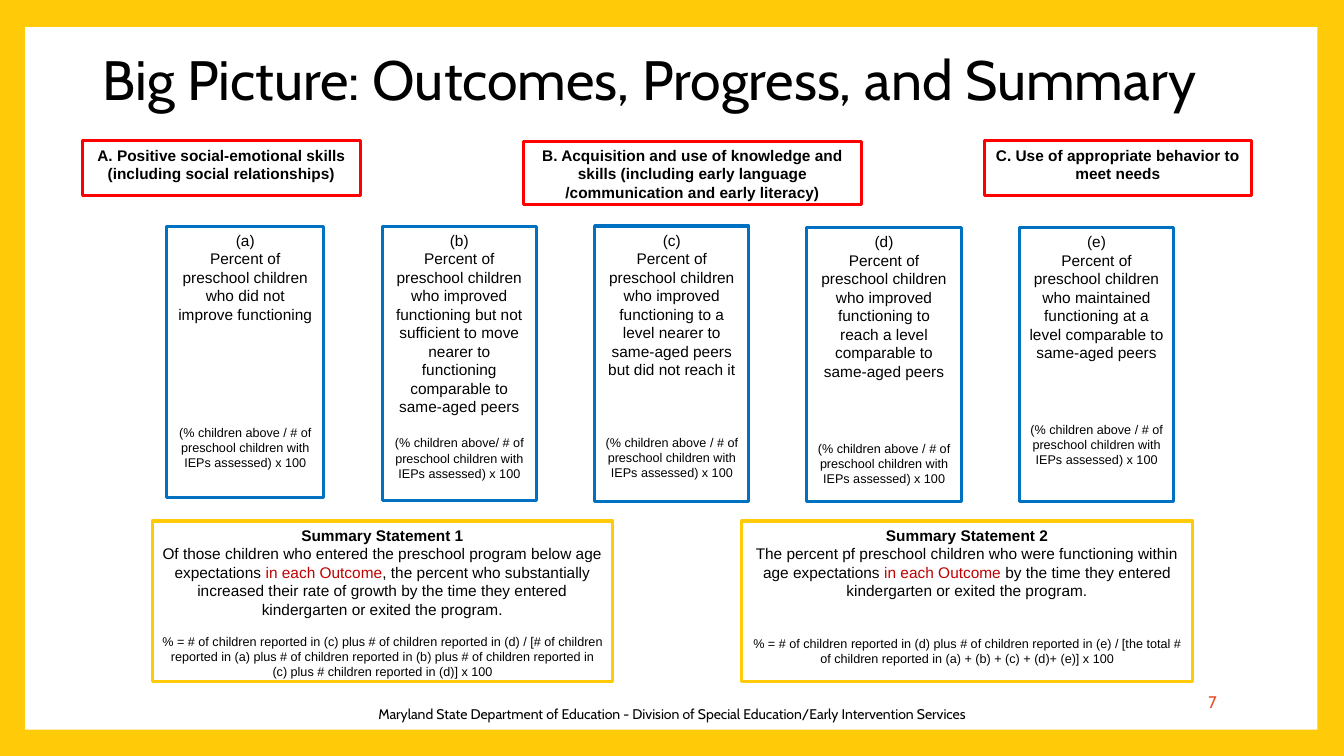
from pptx import Presentation
from pptx.dml.color import RGBColor
from pptx.enum import shapes, text
from pptx.util import Pt

BLACK, WHITE, GOLD = "000000", "FFFFFF", "FFCA08"
RED, BLUE, CRIMSON, ORANGE = "FF0000", "0070C0", "C00000", "E64823"
CENTER, RIGHT = text.PP_ALIGN.CENTER, text.PP_ALIGN.RIGHT
MIDDLE, TOP = text.MSO_ANCHOR.MIDDLE, text.MSO_ANCHOR.TOP

OUTCOMES = [
    ((59, 100.5, 198.4, 39), "A. Positive social-emotional skills (including social relationships)"),
    ((374, 100.8, 241.4, 45.4), "B. Acquisition and use of knowledge and skills "
     "(including early language /communication and early literacy)"),
    ((703, 100.5, 191, 39), "C. Use of appropriate behavior to meet needs"),
]
FORMULA = "(% children above / # of preschool children with IEPs assessed) x 100"
PROGRESS = [
    ((119.2, 161.5, 112, 193.7), "a", "did not improve functioning", 72.2, FORMULA),
    ((273, 161.5, 110.2, 195.8), "b", "improved functioning but not sufficient to move nearer to "
     "functioning comparable to same-aged peers", 13.8, FORMULA.replace("above /", "above/")),
    ((424.8, 161.5, 110.2, 196.6), "c", "improved functioning to a level nearer to same-aged peers "
     "but did not reach it", 39.7, FORMULA),
    ((576.4, 162.4, 110.2, 195.8), "d", "improved functioning to reach a level comparable to "
     "same-aged peers", 43, FORMULA),
    ((728.2, 162.4, 110.2, 195.8), "e", "maintained functioning at a level comparable to "
     "same-aged peers", 43, FORMULA),
]
SUMMARIES = [
    ((108.7, 372.2, 329, 114.5), "Summary Statement 1",
     "Of those children who entered the preschool program below age expectations ",
     "in each Outcome",
     ", the percent who substantially increased their rate of growth by the time they entered "
     "kindergarten or exited the program.", 10.8,
     "% = # of children reported in (c) plus # of children reported in (d) / [# of children "
     "reported in (a) plus # of children reported in (b) plus # of children reported in (c) "
     "plus # children reported in (d)] x 100"),
    ((529.9, 372.2, 321.8, 114.5), "Summary Statement 2",
     "The percent pf preschool children who were functioning within age expectations ",
     "in each Outcome ",
     "by the time they entered kindergarten or exited the program.", 25.8,
     "% = # of children reported in (d) plus # of children reported in (e) / [the total # of "
     "children reported in (a) + (b) + (c) + (d)+ (e)] x 100"),
]


def rgb(color):
    return RGBColor.from_string(color)


def lengths(box):
    return [Pt(value) for value in box]


def apply(target, formats):
    for name, value in formats.items():
        setattr(target, name, value)


def add_words(paragraph, words, color=BLACK, **formats):
    run = paragraph.add_run()
    run.text = words
    apply(run.font, formats)
    run.font.color.rgb = rgb(color)


def fill_frame(frame, paragraphs, anchor=TOP):
    apply(frame, {"word_wrap": True, "vertical_anchor": anchor})
    for index, (layout, runs) in enumerate(paragraphs):
        paragraph = frame.add_paragraph() if index else frame.paragraphs[0]
        apply(paragraph, layout)
        for words, formats in runs:
            add_words(paragraph, words, **formats)


def arial(words, size=11, color=BLACK, bold=False):
    return words, {"size": Pt(size), "name": "Arial", "color": color, "bold": bold}


def centered(*runs, gap=0):
    return {"alignment": CENTER, "space_before": Pt(gap)}, runs


def add_panel(slide, box, outline=None, paragraphs=()):
    panel = slide.shapes.add_shape(shapes.MSO_SHAPE.RECTANGLE, *lengths(box))
    panel.shadow.inherit = False
    panel.fill.solid()
    panel.fill.fore_color.rgb = rgb(WHITE)
    if outline:
        panel.line.color.rgb = rgb(outline)
        panel.line.width = Pt(2.25)
    else:
        panel.line.fill.background()
    fill_frame(panel.text_frame, paragraphs)


def add_outcome(slide, box, skill):
    add_panel(slide, box, RED, [centered(arial(skill, bold=True))])


def add_progress(slide, box, letter, result, gap, formula):
    add_panel(slide, box, BLUE, [
        centered(arial(f"({letter})")),
        centered(arial(f"Percent of preschool children who {result}")),
        centered(arial(formula, 9), gap=gap),
    ])


def add_summary(slide, box, heading, opening, emphasis, ending, gap, formula):
    add_panel(slide, box, GOLD, [
        centered(arial(heading, bold=True)),
        centered(arial(opening), arial(emphasis, color=CRIMSON), arial(ending)),
        centered(arial(formula, 9), gap=gap),
    ])


def add_title(slide, box, words):
    title = slide.shapes.title
    title.element.getparent().append(title.element)
    apply(title, dict(zip(("left", "top", "width", "height"), lengths(box))))
    layout = {"alignment": text.PP_ALIGN.LEFT, "line_spacing": 0.9}
    runs = [(words, {"size": Pt(39.6), "name": "Cabin"})]
    fill_frame(title.text_frame, [(layout, runs)], MIDDLE)


def add_note(slide, box, words, size, color, alignment, anchor):
    note = slide.shapes.add_textbox(*lengths(box))
    runs = [(words, {"size": Pt(size), "name": "Cabin", "color": color})]
    fill_frame(note.text_frame, [({"alignment": alignment}, runs)], anchor)


def main():
    deck = Presentation()
    apply(deck, {"slide_width": Pt(960), "slide_height": Pt(540)})
    slide = deck.slides.add_slide(deck.slide_layouts[5])
    slide.background.fill.solid()
    slide.background.fill.fore_color.rgb = rgb(GOLD)

    add_panel(slide, (18, 19.4, 923, 501.8))
    add_title(slide, (66.2, 20.6, 859, 77), "Big Picture: Outcomes, Progress, and Summary")
    add_note(slide, (741.6, 486.7, 134.6, 28.8), "7", 12, ORANGE, RIGHT, MIDDLE)
    for add_region, entries in ((add_outcome, OUTCOMES), (add_progress, PROGRESS),
                                (add_summary, SUMMARIES)):
        for entry in entries:
            add_region(slide, *entry)
    add_note(slide, (261.4, 500.4, 437, 19.4),
             "Maryland State Department of Education - Division of Special Education/"
             "Early Intervention Services", 10, BLACK, CENTER, TOP)

    deck.save("out.pptx")


if __name__ == "__main__":
    main()
